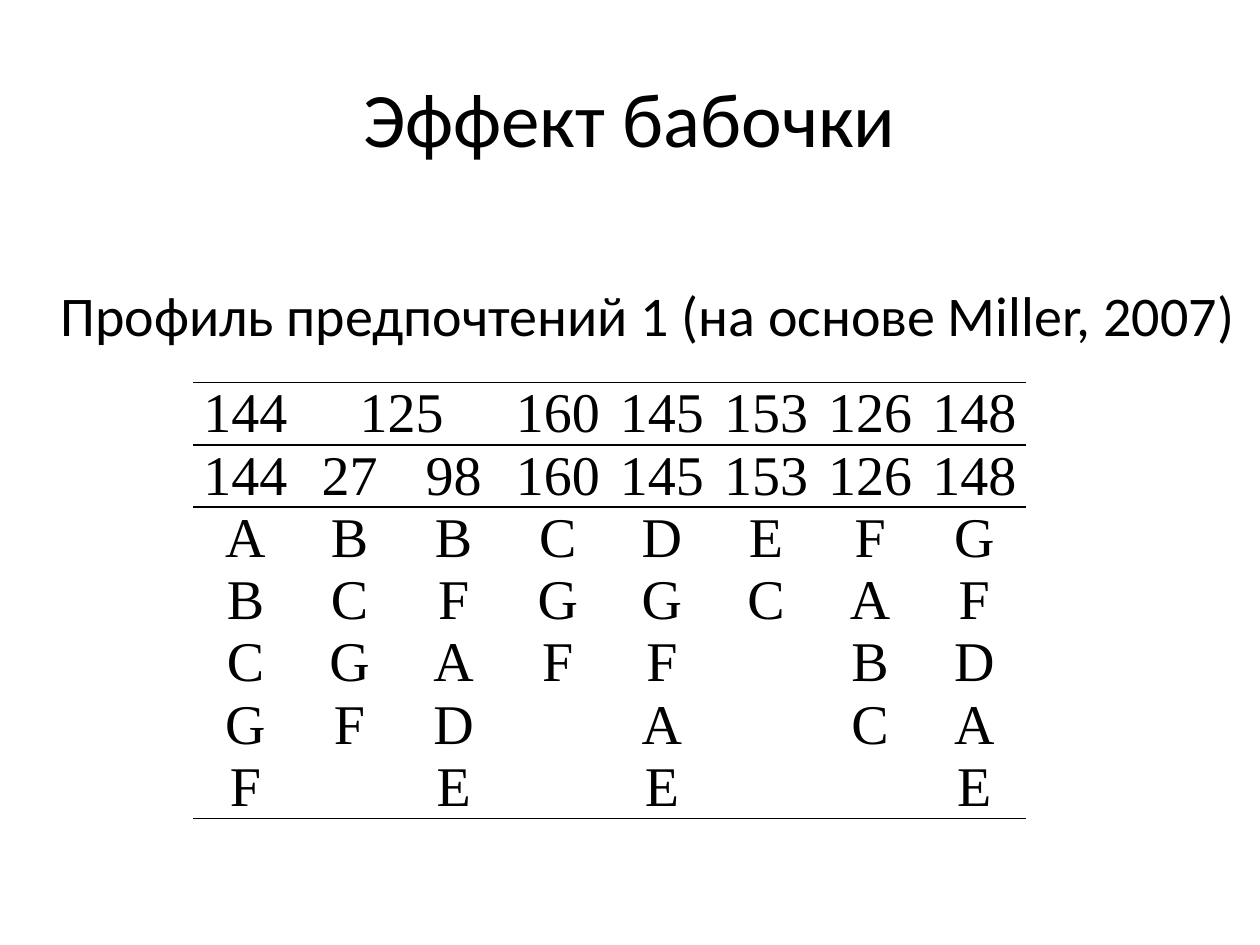
from pptx import Presentation
from pptx.dml.color import RGBColor
from pptx.enum.text import MSO_ANCHOR, MSO_AUTO_SIZE, PP_ALIGN
from pptx.oxml import parse_xml
from pptx.oxml.ns import nsdecls, qn
from pptx.util import Pt

MIDDLE = MSO_ANCHOR.MIDDLE
TOP = MSO_ANCHOR.TOP
GROW = MSO_AUTO_SIZE.SHAPE_TO_FIT_TEXT
FIXED = MSO_AUTO_SIZE.NONE
LEFT = PP_ALIGN.LEFT
CENTER = PP_ALIGN.CENTER

COLORS = {"ink": "000000", "paper": "FFFFFF"}
PLAIN = "{2D5ABB26-0587-4C30-8999-92F81FD0307C}"
VOTES = [
    ["144", "125", "", "160", "145", "153", "126", "148"],
    ["144", "27", "98", "160", "145", "153", "126", "148"],
    ["A", "B", "B", "C", "D", "E", "F", "G"],
    ["B", "C", "F", "G", "G", "C", "A", "F"],
    ["C", "G", "A", "F", "F", "", "B", "D"],
    ["G", "F", "D", "", "A", "", "C", "A"],
    ["F", "", "E", "", "E", "", "", "E"],
]


def write(frame, text, size=32, font="Calibri", color="ink", align=CENTER):
    par = frame.paragraphs[0]
    par.alignment = align
    run = par.add_run()
    run.text = text
    run.font.size = Pt(size)
    run.font.name = font
    run.font.color.rgb = RGBColor.from_string(COLORS[color])


class Deck:
    """Hold the style and the current slide, and draw each kind of element."""

    def __init__(self, deck):
        self.slide = deck.slides.add_slide(deck.slide_layouts[6])
        fill = self.slide.background.fill
        fill.solid()
        fill.fore_color.rgb = RGBColor.from_string(COLORS["paper"])

    def text(self, text, left, top, width, height, anchor=TOP, wrap=True, **style):
        box = self.slide.shapes.add_textbox(Pt(left), Pt(top), Pt(width), Pt(height))
        frame = box.text_frame
        frame.word_wrap = wrap
        frame.auto_size = FIXED if wrap else GROW
        frame.vertical_anchor = anchor
        write(frame, text, **style)

    def rule(self, cell, sides, width=1):
        props = cell._tc.get_or_add_tcPr()
        for index, side in enumerate(sides):
            line = parse_xml(
                f'<a:ln{side} {nsdecls("a")} w="{Pt(width)}"><a:solidFill>'
                f'<a:srgbClr val="{COLORS["ink"]}"/></a:solidFill></a:ln{side}>'
            )
            props.insert(index, line)

    def table(self, rows, left, top, width, height, rules, **style):
        count, span = len(rows), len(rows[0])
        shape = self.slide.shapes.add_table(
            count, span, Pt(left), Pt(top), Pt(width), Pt(height)
        )
        grid = shape.table
        grid.first_row = grid.horz_banding = False
        grid._tbl.tblPr.find(qn("a:tableStyleId")).text = PLAIN
        for r, row in enumerate(rows):
            for c, text in enumerate(row):
                cell = grid.cell(r, c)
                cell.fill.background()
                cell.vertical_anchor = MIDDLE
                cell.margin_left = cell.margin_right = Pt(5)
                cell.margin_top = cell.margin_bottom = 0
                self.rule(cell, rules.get(r, ""))
                if text:
                    write(cell.text_frame, text, **style)
        return grid


def main():
    deck = Presentation()
    deck.slide_width, deck.slide_height = Pt(720), Pt(540)
    page = Deck(deck)
    page.text("Эффект бабочки", 36, 21.6, 648, 90, anchor=MIDDLE, size=44)
    grid = page.table(
        VOTES, 110.5, 218.7, 476, 249.2,
        rules={0: "TB", 1: "T", 6: "B"}, font="Times New Roman",
    )
    grid.cell(0, 1).merge(grid.cell(0, 2))
    page.text(
        "Профиль предпочтений 1 (на основе Miller, 2007)",
        27.4, 157, 692.6, 46, wrap=False, align=LEFT,
    )
    deck.save("out.pptx")


if __name__ == "__main__":
    main()
